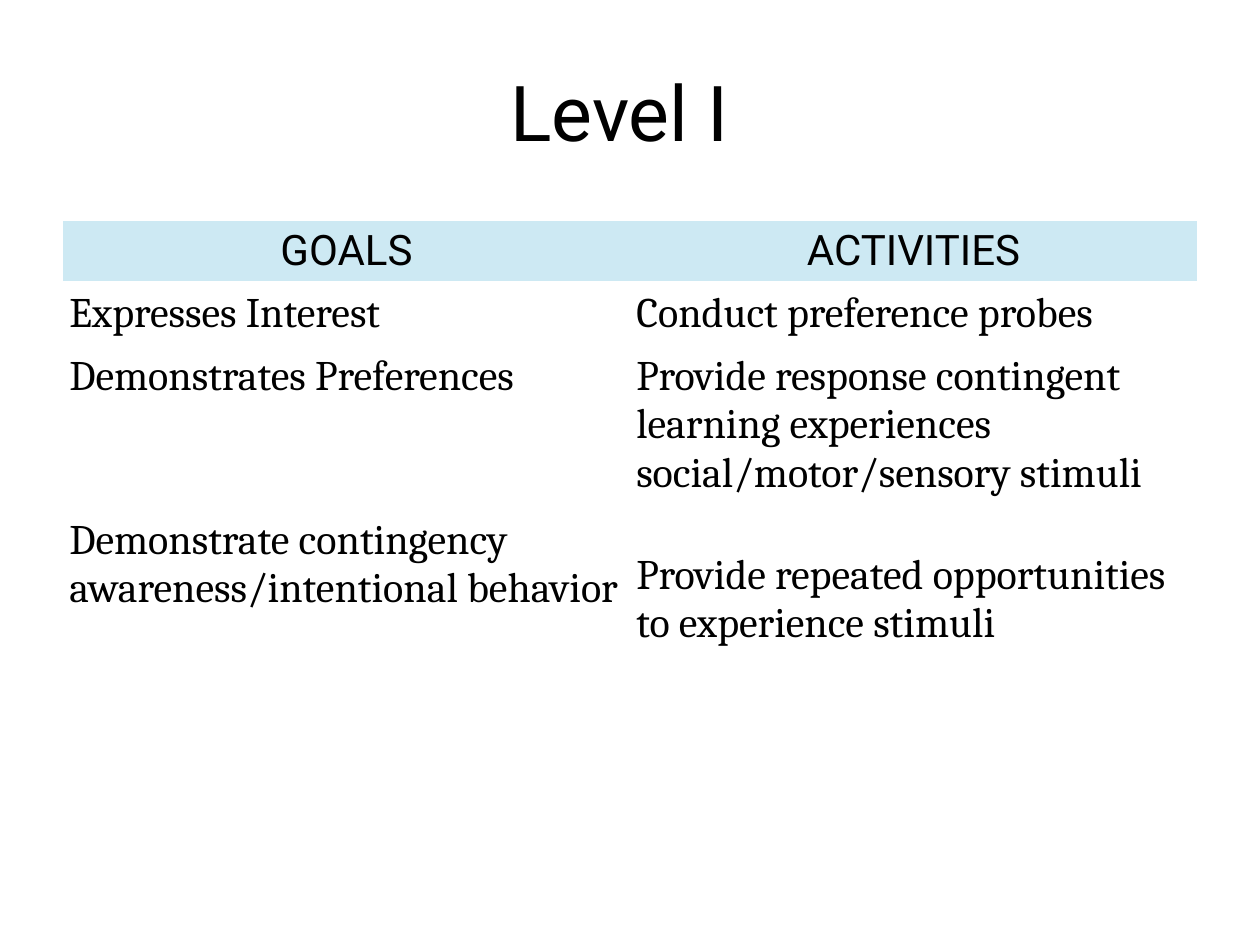
from pptx import Presentation
from pptx.dml.color import RGBColor
from pptx.enum.text import MSO_ANCHOR as Anchor, PP_ALIGN as Align
from pptx.oxml import parse_xml
from pptx.oxml.ns import nsdecls, qn
from pptx.util import Pt

BLACK = RGBColor(0, 0, 0)
WHITE = RGBColor(255, 255, 255)
BLUE = RGBColor(0xCD, 0xE9, 0xF3)
PLAIN = "{2D5ABB26-0587-4C30-8999-92F81FD0307C}"  # table style without grid

ROWS = [
    ("GOALS", "ACTIVITIES"),
    ("Expresses Interest", "Conduct preference probes"),
    ("Demonstrates Preferences",
     "Provide response contingent learning experiences "
     "social/motor/sensory stimuli"),
    ("Demonstrate contingency awareness/intentional behavior",
     "Provide repeated opportunities to experience stimuli"),
]
HEIGHTS = [36, 36, 93.6, 161.28]
PAD = Pt(3.6)


def style(para, face, size, align):
    para.alignment = align
    para.font.name = face
    para.font.size = Pt(size)
    para.font.color.rgb = BLACK


def rule(cell, tag):
    """Draw a white 3 pt line on one side of a cell."""
    line = parse_xml(
        f'<a:{tag} {nsdecls("a")} w="{Pt(3)}"><a:solidFill>'
        f'<a:srgbClr val="{WHITE}"/></a:solidFill></a:{tag}>')
    cell._tc.get_or_add_tcPr().insert(0, line)


deck = Presentation()
deck.slide_width, deck.slide_height = Pt(720), Pt(540)
slide = deck.slides.add_slide(deck.slide_layouts[5])

# Title
title = slide.shapes.title
place = dict(left=Pt(30), top=Pt(18), width=Pt(648), height=Pt(90))
for key, val in place.items():
    setattr(title, key, val)
frame = title.text_frame
frame.text = "Level I"
inset = dict(margin_left=0, margin_top=0, margin_right=0, margin_bottom=0,
             vertical_anchor=Anchor.MIDDLE)
for key, val in inset.items():
    setattr(frame, key, val)
style(frame.paragraphs[0], "Roboto", 44, Align.CENTER)

# Table
table = slide.shapes.add_table(
    len(ROWS), 2, Pt(36), Pt(126), Pt(648), Pt(sum(HEIGHTS))).table
table.first_row = table.horz_banding = False
table._tbl.tblPr.find(qn("a:tableStyleId")).text = PLAIN

form = dict(margin_left=PAD, margin_top=PAD, margin_right=PAD,
            margin_bottom=PAD, vertical_anchor=Anchor.TOP)
for r, (texts, high) in enumerate(zip(ROWS, HEIGHTS)):
    table.rows[r].height = Pt(high)
    head = r == 0
    for c, text in enumerate(texts):
        cell = table.cell(r, c)
        cell.text = text
        for key, val in form.items():
            setattr(cell, key, val)
        cell.fill.solid()
        cell.fill.fore_color.rgb = BLUE if head else WHITE
        style(cell.text_frame.paragraphs[0], "Roboto" if head else "Cambria",
              24, Align.CENTER if head else Align.LEFT)
        # White rule between header and body
        if r < 2:
            rule(cell, "lnB" if head else "lnT")

# The last activity starts lower than its goal
table.cell(3, 1).margin_top = Pt(23.6)

deck.save("out.pptx")
